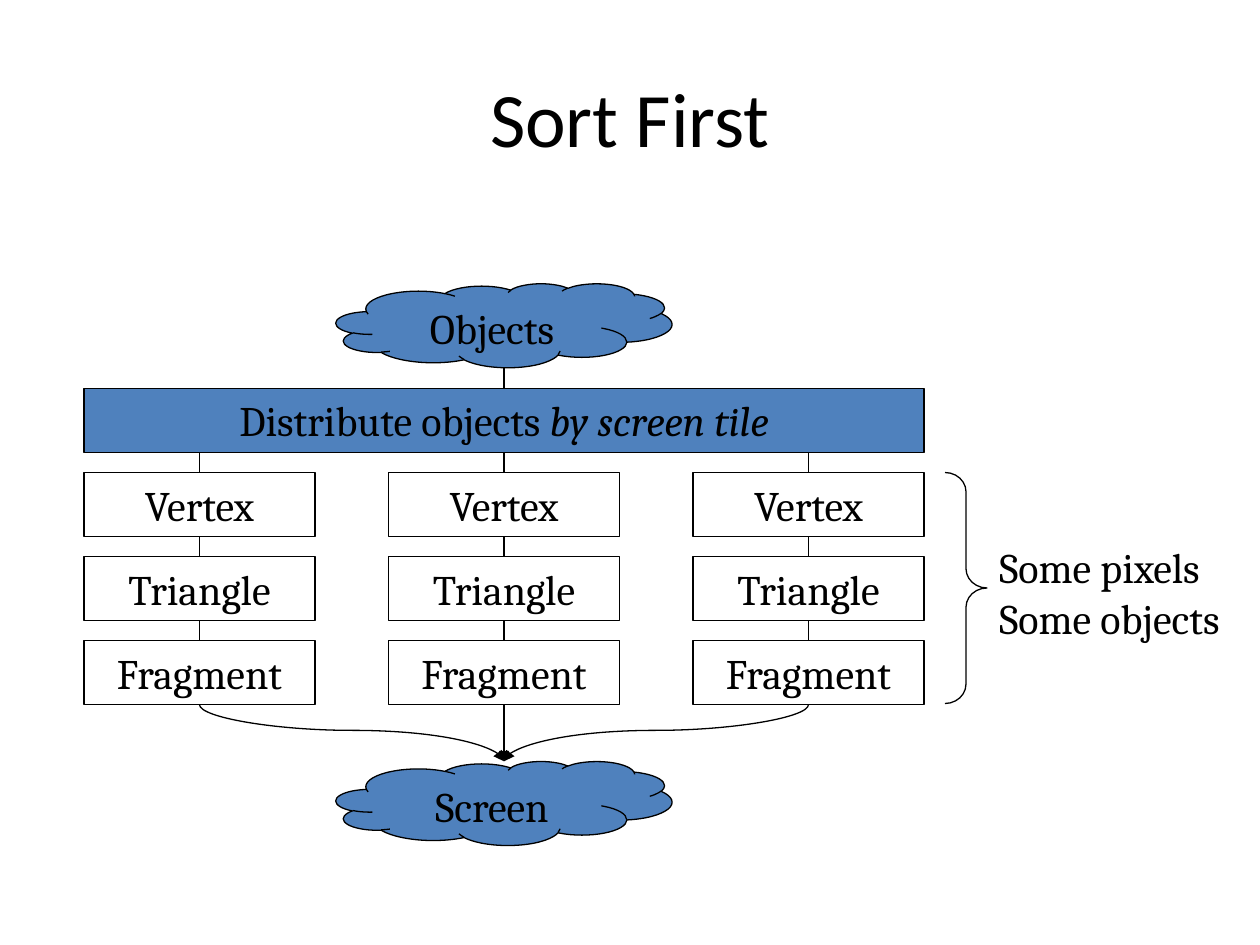
import pptx
import pptx.dml.color
import pptx.enum.shapes
import pptx.enum.text
import pptx.oxml
import pptx.oxml.ns
import pptx.util

BLACK = pptx.dml.color.RGBColor(0x00, 0x00, 0x00)
BLUE = pptx.dml.color.RGBColor(0x4F, 0x81, 0xBD)
SHAPE = pptx.enum.shapes.MSO_SHAPE
CONNECTOR = pptx.enum.shapes.MSO_CONNECTOR
ANCHOR = pptx.enum.text.MSO_ANCHOR
ALIGN = pptx.enum.text.PP_ALIGN
GROW = pptx.enum.text.MSO_AUTO_SIZE.SHAPE_TO_FIT_TEXT

COLS, ROWS = 120, 90
LANES = (8, 37, 66)
STAGES = ("Vertex", "Triangle", "Fragment")
BAR_ROW, ROW_STEP = 37, 8
BOX_W, BOX_H = 22, 6.1
CLOUD_COL, CLOUD_W, CLOUD_H = 32, 32, 8
OBJECTS_ROW, SCREEN_ROW = 27, 72.5
BODY = {"name": "Cambria", "size": pptx.util.Pt(24)}
HEADING = {"name": "Calibri", "size": pptx.util.Pt(44)}
BOX_FRAME = {"vertical_anchor": ANCHOR.MIDDLE, "auto_size": GROW}


def grid(*cells):
    """Turn grid counts into lengths."""
    return [pptx.util.Inches(10 * n / COLS) for n in cells]


def set_attrs(obj, values):
    """Set each attribute named in a dict."""
    for name, value in values.items():
        setattr(obj, name, value)


def write(sp, lines, font, frame, align=ALIGN.CENTER):
    """Write lines, each a list of (text, italic) runs, into a shape."""
    tf = sp.text_frame
    set_attrs(tf, {"word_wrap": True, **frame})
    for i, line in enumerate(lines):
        p = tf.add_paragraph() if i else tf.paragraphs[0]
        p.alignment = align
        for text, italic in line:
            r = p.add_run()
            r.text = text
            set_attrs(r.font, {**font, "italic": italic})
            r.font.color.rgb = BLACK


def outline(sp):
    """Give a shape or connector the thin black line."""
    sp.line.color.rgb = BLACK
    sp.line.width = pptx.util.Pt(0.75)


def add_node(s, kind, at, runs=(), fill=None, frame=None):
    """Add an outlined preset shape with optional fill and text."""
    sp = s.shapes.add_shape(kind, *grid(*at))
    sp.shadow.inherit = False
    outline(sp)
    if fill is None:
        sp.fill.background()
    else:
        sp.fill.solid()
        sp.fill.fore_color.rgb = fill
    if runs:
        write(sp, [runs], BODY, frame or {})
    return sp


def add_text(s, at, lines, font, frame, align):
    """Add a text box."""
    sp = s.shapes.add_textbox(*grid(*at))
    write(sp, lines, font, frame, align)


def add_link(s, ends, kind=CONNECTOR.STRAIGHT, arrow=False):
    """Add a thin connector between two grid points."""
    c = s.shapes.add_connector(kind, *grid(*ends))
    outline(c)
    pptx.oxml.ns.qn("a:ln")
    if arrow:
        ln = c.line._get_or_add_ln()
        pptx.oxml.xmlchemy.OxmlElement
        tail = pptx.oxml.parse_xml(f'<a:tailEnd {pptx.oxml.ns.nsdecls("a")} type="triangle"/>')
        ln.append(tail)
    c.element.spPr.append(pptx.oxml.parse_xml(f'<a:effectLst {pptx.oxml.ns.nsdecls("a")}/>'))
    return c


def add_curve(s, x1, y1, x2, y2):
    """Add a curved arrow that leaves and arrives vertically."""
    mid_x, mid_y = (x1 + x2) / 2, (y1 + y2) / 2
    half_w, half_h = (y2 - y1) / 2, abs(x2 - x1) / 2
    rightward = x2 > x1
    turn = half_w if rightward else -half_w
    c = add_link(s, (mid_x + turn, mid_y - half_h, mid_x - turn, mid_y + half_h),
                 CONNECTOR.CURVE, arrow=True)
    qn = pptx.oxml.ns.qn
    c.element.spPr.find(qn("a:xfrm")).set("rot", str((270 if rightward else 90) * 60000))
    geom = c.element.spPr.find(qn("a:prstGeom"))
    geom.find(qn("a:avLst")).append(pptx.oxml.parse_xml(
        f'<a:gd {pptx.oxml.ns.nsdecls("a")} name="adj1" fmla="val 45500"/>'))


def add_lane(s, col, bar):
    """Add one pipeline of linked stages below the bar."""
    mid = col + BOX_W / 2
    above = bar
    for i, stage in enumerate(STAGES, 1):
        top = BAR_ROW + i * ROW_STEP
        box = add_node(s, SHAPE.RECTANGLE, (col, top, BOX_W, BOX_H),
                       [(stage, False)], frame=BOX_FRAME)
        c = add_link(s, (mid, top - ROW_STEP + BOX_H, mid, top))
        if above is not bar or col == LANES[1]:
            c.begin_connect(above, 2)
        c.end_connect(box, 0)
        above = box
    bottom, centre = top + BOX_H, CLOUD_COL + CLOUD_W / 2
    if mid == centre:
        c = add_link(s, (mid, bottom, centre, SCREEN_ROW), arrow=True)
        c.begin_connect(above, 2)
    else:
        add_curve(s, mid, bottom, centre, SCREEN_ROW)


def main():
    """Build the sort-first slide."""
    prs = pptx.Presentation()
    set_attrs(prs, {"slide_width": pptx.util.Inches(10), "slide_height": pptx.util.Inches(7.5)})
    s = prs.slides.add_slide(prs.slide_layouts[6])
    add_text(s, (6, 3.6, 108, 15), [[("Sort First", False)]], HEADING,
             {"vertical_anchor": ANCHOR.MIDDLE}, ALIGN.CENTER)

    bar = add_node(s, SHAPE.RECTANGLE, (LANES[0], BAR_ROW, LANES[-1] + BOX_W - LANES[0], BOX_H),
                   [("Distribute objects ", False), ("by screen tile", True)], BLUE,
                   {"vertical_anchor": ANCHOR.TOP, "auto_size": GROW})
    centre = CLOUD_COL + CLOUD_W / 2
    c = add_link(s, (centre, OBJECTS_ROW + CLOUD_H, centre, BAR_ROW))
    c.end_connect(bar, 0)
    for col in LANES:
        add_lane(s, col, bar)
    for text, row in (("Objects", OBJECTS_ROW), ("Screen", SCREEN_ROW)):
        add_node(s, SHAPE.CLOUD, (CLOUD_COL, row, CLOUD_W, CLOUD_H), [(text, False)], BLUE,
                 {"vertical_anchor": ANCHOR.TOP})

    brace = add_node(s, SHAPE.RIGHT_BRACE, (90, BAR_ROW + ROW_STEP, 4, 22))
    brace.adjustments[0] = 0.46
    add_text(s, (94, 51, 24, 10.8), [[("Some pixels", False)], [("Some objects", False)]], BODY,
             {"word_wrap": False, "auto_size": GROW}, ALIGN.LEFT)
    prs.save("out.pptx")


if __name__ == "__main__":
    main()
